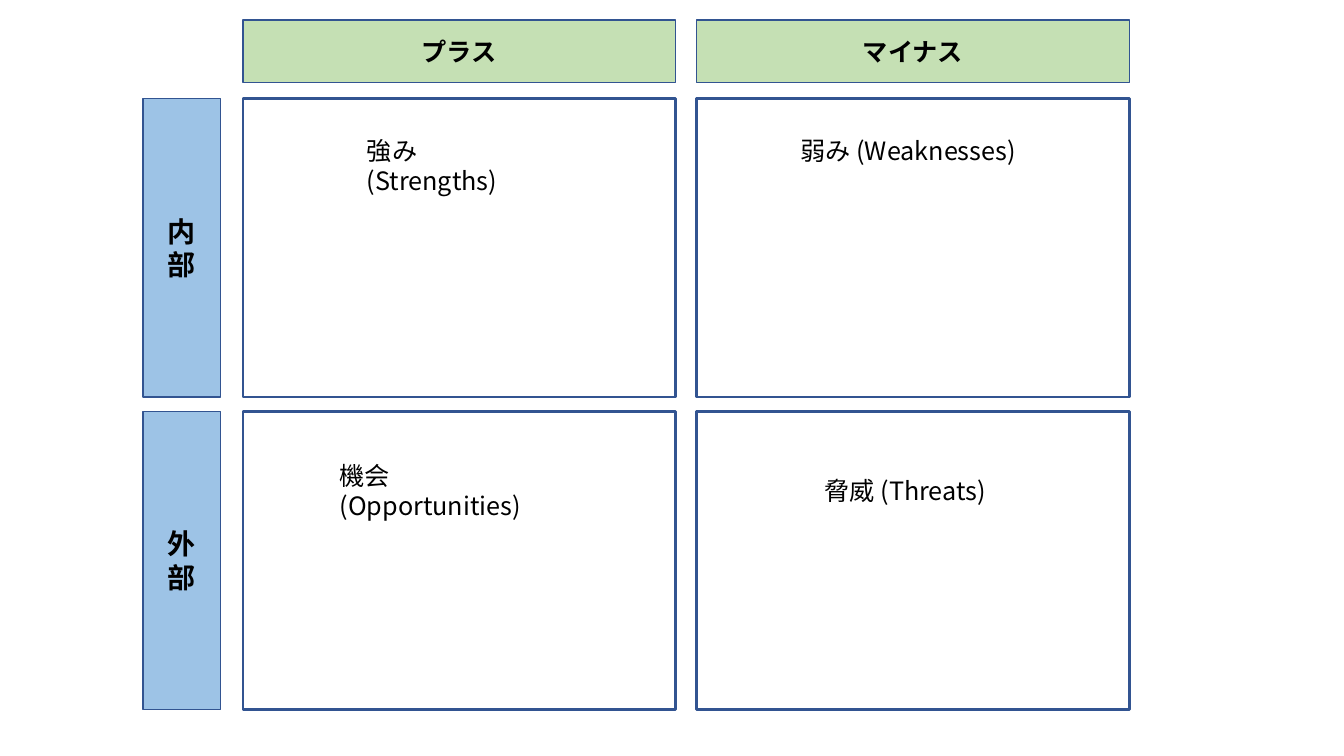
from pptx import Presentation
from pptx.dml.color import RGBColor
from pptx.enum.shapes import MSO_SHAPE
from pptx.enum.text import MSO_ANCHOR, PP_ALIGN
from pptx.util import Inches, Pt

NAVY = RGBColor(0x32, 0x54, 0x91)
BLUE = RGBColor(0x9D, 0xC3, 0xE6)
GREEN = RGBColor(0xC5, 0xE0, 0xB4)
BLACK = RGBColor(0, 0, 0)


class Board:
    font = "Noto Sans CJK JP"

    def __init__(self, slide):
        self.slide = slide

    def style(self, frame, text, size, bold=False, align=PP_ALIGN.LEFT):
        frame.text = text
        for line in frame.paragraphs:
            line.alignment = align
            for run in line.runs:
                run.font.name = self.font
                run.font.size = Pt(size)
                run.font.bold = bold
                run.font.color.rgb = BLACK
                props = run.font._element
                east = props.makeelement(
                    "{http://schemas.openxmlformats.org/drawingml/2006/main}ea",
                    {"typeface": self.font})
                props.append(east)

    def box(self, left, top, width, height, weight, fill=None):
        shape = self.slide.shapes.add_shape(
            MSO_SHAPE.RECTANGLE, Inches(left), Inches(top), Inches(width), Inches(height))
        shape.shadow.inherit = False
        if fill is None:
            shape.fill.background()
        else:
            shape.fill.solid()
            shape.fill.fore_color.rgb = fill
        shape.line.color.rgb = NAVY
        shape.line.width = Pt(weight)
        return shape

    def head(self, text, left, top, width, height, fill, size):
        frame = self.box(left, top, width, height, 1, fill).text_frame
        frame.vertical_anchor = MSO_ANCHOR.MIDDLE
        self.style(frame, text, size, True, PP_ALIGN.CENTER)

    def label(self, text, left, top, width):
        area = self.slide.shapes.add_textbox(
            Inches(left), Inches(top), Inches(width), Inches(0.4))
        area.text_frame.word_wrap = True
        self.style(area.text_frame, text, 18)


def main():
    deck = Presentation()
    deck.slide_width = Inches(13.33)
    deck.slide_height = Inches(7.5)
    board = Board(deck.slides.add_slide(deck.slide_layouts[6]))

    cols = [2.41, 6.91]
    rows = [0.98, 4.08]
    width, height = 4.29, 2.96

    for top in rows:
        for left in cols:
            board.box(left, top, width, height, 2)
    for text, top in zip(["内\n部", "外\n部"], rows):
        board.head(text, 1.42, top, 0.77, height, BLUE, 20)
    for text, left in zip(["プラス", "マイナス"], cols):
        board.head(text, left, 0.2, width, 0.62, GREEN, 18)

    labels = [
        ("強み\v(Strengths)", 3.54, 1.29, 2.03),
        ("弱み (Weaknesses)", 7.84, 1.29, 2.44),
        ("機会\v(Opportunities)", 3.27, 4.52, 2.56),
        ("脅威 (Threats)", 8.08, 4.67, 1.94),
    ]
    for label in labels:
        board.label(*label)

    deck.save("out.pptx")


if __name__ == "__main__":
    main()
